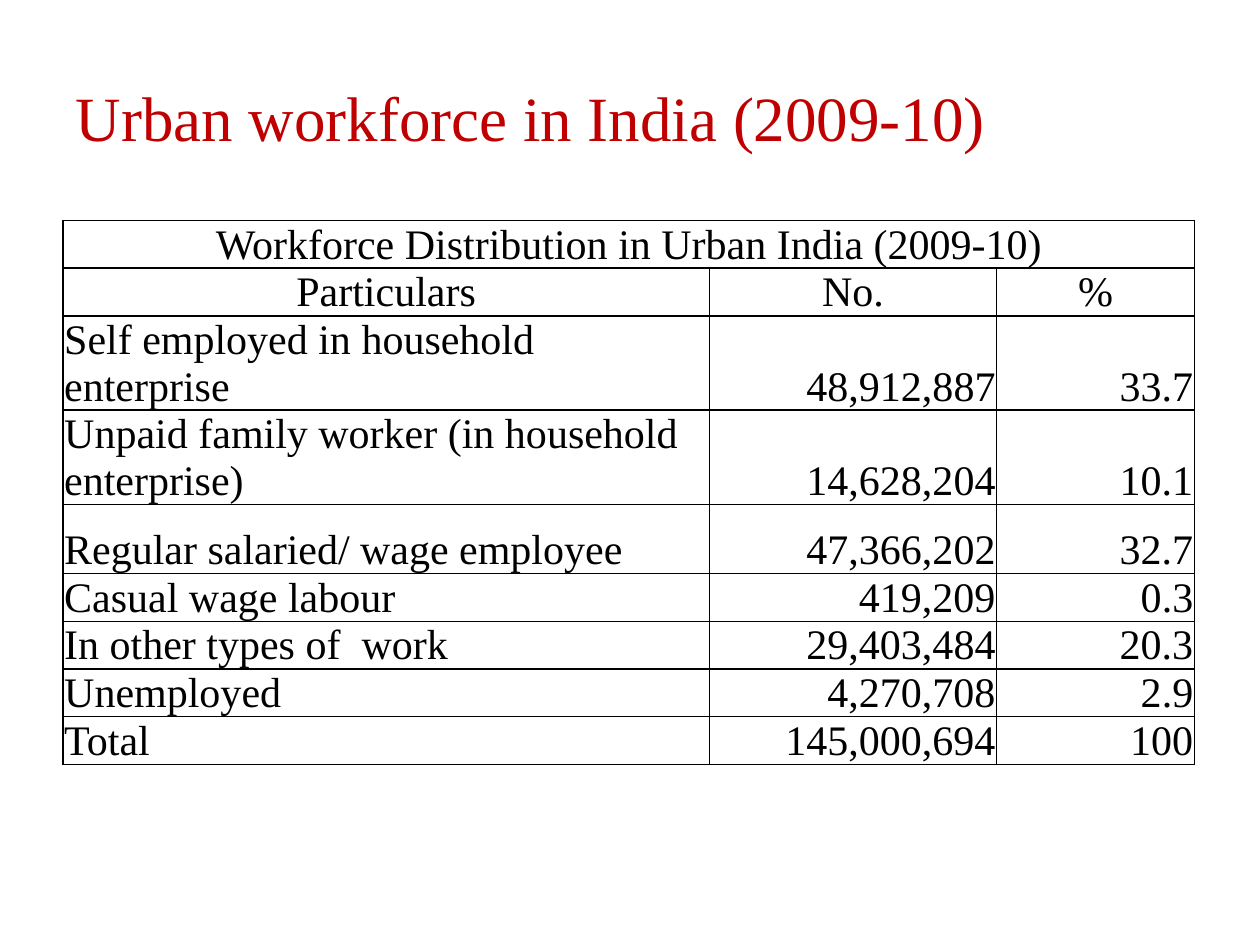
from dataclasses import dataclass

from lxml.etree import SubElement
from pptx import Presentation
from pptx.dml.color import RGBColor
from pptx.enum.text import MSO_ANCHOR, PP_ALIGN
from pptx.oxml.ns import qn
from pptx.util import Inches, Pt


@dataclass(frozen=True)
class Theme:
    font: str = "Times New Roman"
    title_color: str = "C00000"
    text_color: str = "000000"
    border_color: str = "000000"
    title_size: int = 36
    table_size: int = 24
    border_width: int = 1


theme = Theme()


def write_text(frame, text, size, color, alignment):
    para = frame.paragraphs[0]
    para.alignment = alignment
    span = para.add_run()
    span.text = text
    font_format = {"name": theme.font, "size": Pt(size), "bold": False}
    for name, value in font_format.items():
        setattr(span.font, name, value)
    span.font.color.rgb = RGBColor.from_string(color)


def add_borders(cell):
    properties = cell._tc.get_or_add_tcPr()
    for side in ("lnL", "lnR", "lnT", "lnB"):
        line = SubElement(properties, qn(f"a:{side}"), w=str(Pt(theme.border_width)))
        fill = SubElement(line, qn("a:solidFill"))
        SubElement(fill, qn("a:srgbClr"), val=theme.border_color)


deck = Presentation()
deck.slide_width, deck.slide_height = Inches(10), Inches(7.5)
page = deck.slides.add_slide(deck.slide_layouts[5])

# Title
title = page.shapes.title
title_place = {"left": 0.5, "top": 0.3, "width": 9.15, "height": 1.25}
for name, value in title_place.items():
    setattr(title, name, Inches(value))
title.text_frame.vertical_anchor = MSO_ANCHOR.MIDDLE
write_text(title.text_frame, "Urban workforce in India (2009-10)",
           theme.title_size, theme.title_color, PP_ALIGN.LEFT)

# Workforce table: a merged heading, column names, then the figures
rows = [
    ("Workforce Distribution in Urban India (2009-10)", "", ""),
    ("Particulars", "No.", "%"),
    ("Self employed in household enterprise", "48,912,887", "33.7"),
    ("Unpaid family worker (in household enterprise)", "14,628,204", "10.1"),
    ("Regular salaried/ wage employee", "47,366,202", "32.7"),
    ("Casual wage labour", "419,209", "0.3"),
    ("In other types of  work", "29,403,484", "20.3"),
    ("Unemployed", "4,270,708", "2.9"),
    ("Total", "145,000,694", "100"),
]
header_rows = 2
tall_rows = (2, 3, 4)
column_widths = (5.13, 2.28, 1.57)
row_heights = [0.55 if index in tall_rows else 0.36 for index in range(len(rows))]

table = page.shapes.add_table(
    len(rows), len(column_widths), Inches(0.5), Inches(1.75),
    Inches(sum(column_widths)), Inches(sum(row_heights))).table
table.first_row = table.horz_banding = False
for column, width in zip(table.columns, column_widths):
    column.width = Inches(width)
for row, height in zip(table.rows, row_heights):
    row.height = Inches(height)
table.cell(0, 0).merge(table.cell(0, len(column_widths) - 1))

cell_format = {
    "margin_left": Inches(0.01),
    "margin_right": Inches(0.01),
    "margin_top": Inches(0.01),
    "margin_bottom": Inches(0),
    "vertical_anchor": MSO_ANCHOR.BOTTOM,
}
for row_index, texts in enumerate(rows):
    for column_index, text in enumerate(texts):
        cell = table.cell(row_index, column_index)
        for name, value in cell_format.items():
            setattr(cell, name, value)
        add_borders(cell)
        cell.fill.background()
        if row_index < header_rows:
            alignment = PP_ALIGN.CENTER
        else:
            alignment = PP_ALIGN.RIGHT if column_index else PP_ALIGN.LEFT
        if text:
            write_text(cell.text_frame, text, theme.table_size,
                       theme.text_color, alignment)

deck.save("out.pptx")
